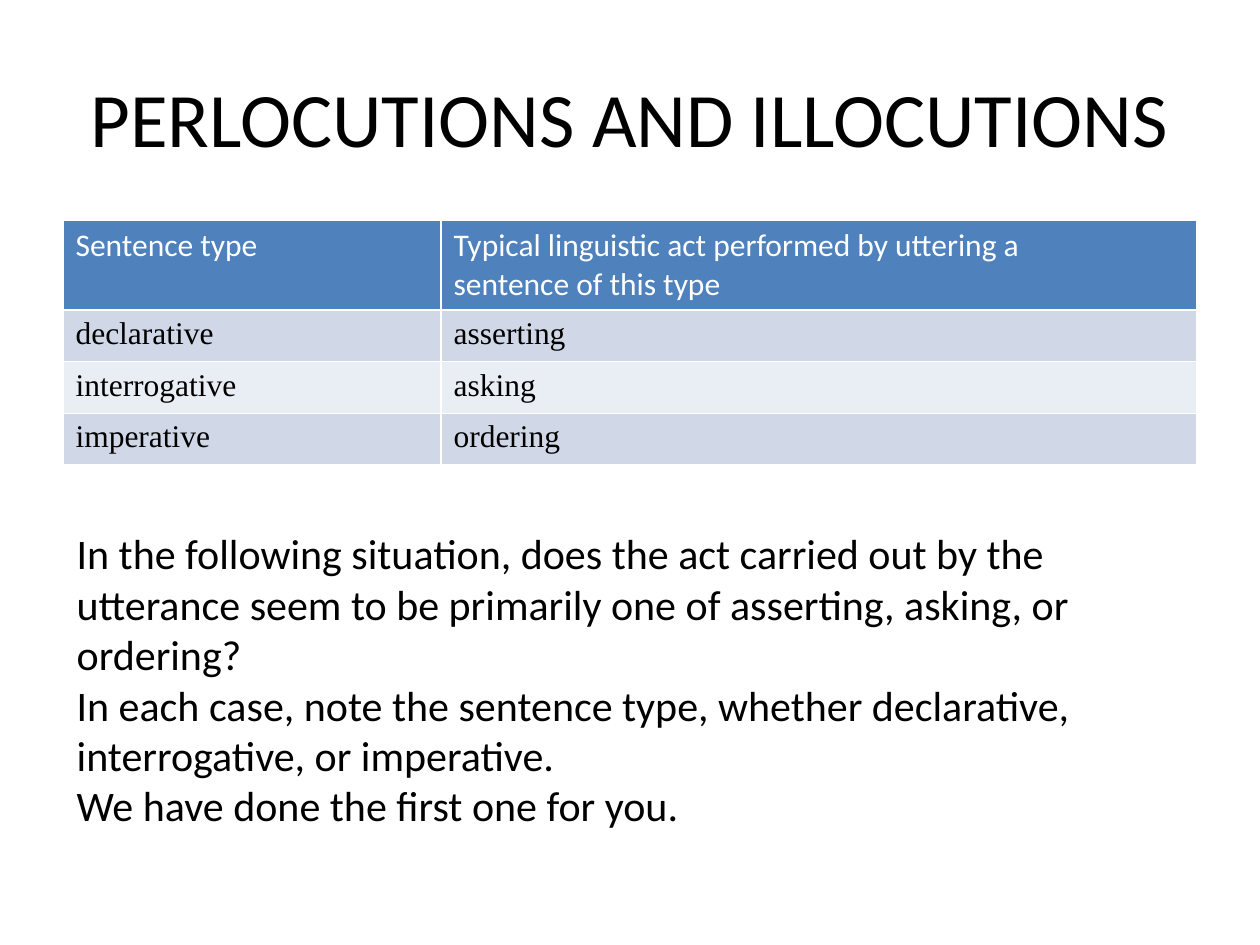
from dataclasses import dataclass

import pptx
import pptx.dml.color
import pptx.enum.text
import pptx.util

Inches = pptx.util.Inches

COLORS = {
    "text": "000000",
    "header_text": "FFFFFF",
    "header": "4F81BD",
    "band_dark": "D0D8E8",
    "band_light": "E9EDF4",
}
TITLE = "PERLOCUTIONS AND ILLOCUTIONS"
INSTRUCTIONS = [
    "In the following situation, does the act carried out by the utterance seem "
    "to be primarily one of asserting, asking, or ordering?",
    "In each case, note the sentence type, whether declarative, interrogative, "
    "or imperative.",
    "We have done the first one for you.",
]
COLUMN_WIDTHS = [3, 6]
ROW_HEIGHT = 0.41


@dataclass
class TableRow:
    sentence_type: str
    linguistic_act: str
    fill: str
    font_name: str = "Times New Roman"
    text_color: str = "text"


ROWS = [
    TableRow(
        "Sentence type",
        "Typical linguistic act performed by uttering a\nsentence of this type",
        "header",
        "Calibri",
        "header_text",
    ),
    TableRow("declarative", "asserting", "band_dark"),
    TableRow("interrogative", "asking", "band_light"),
    TableRow("imperative", "ordering", "band_dark"),
]


def color(name: str) -> pptx.dml.color.RGBColor:
    return pptx.dml.color.RGBColor.from_string(COLORS[name])


def write_text(frame, text: str, size: float, font_name: str = "Calibri",
               text_color: str = "text") -> None:
    frame.text = text
    for paragraph in frame.paragraphs:
        paragraph.font.size = pptx.util.Pt(size)
        paragraph.font.name = font_name
        paragraph.font.bold = False
        paragraph.font.color.rgb = color(text_color)


def add_title(slide) -> None:
    title = slide.shapes.title
    title.left, title.top = Inches(0.5), Inches(0.3)
    title.width, title.height = Inches(9), Inches(1.25)
    title.text_frame.vertical_anchor = pptx.enum.text.MSO_ANCHOR.MIDDLE
    write_text(title.text_frame, TITLE, 44)
    title.text_frame.paragraphs[0].alignment = pptx.enum.text.PP_ALIGN.CENTER


def add_sentence_table(slide, rows: list[TableRow]) -> None:
    table = slide.shapes.add_table(
        len(rows), len(COLUMN_WIDTHS), Inches(0.5), Inches(1.75),
        Inches(sum(COLUMN_WIDTHS)), Inches(ROW_HEIGHT * len(rows)),
    ).table
    for column, width in zip(table.columns, COLUMN_WIDTHS):
        column.width = Inches(width)
    for table_row, row in zip(table.rows, rows):
        table_row.height = Inches(ROW_HEIGHT)
        for cell, text in zip(table_row.cells, (row.sentence_type, row.linguistic_act)):
            cell.fill.solid()
            cell.fill.fore_color.rgb = color(row.fill)
            write_text(cell.text_frame, text, 18, row.font_name, row.text_color)


def add_instructions(slide) -> None:
    box = slide.shapes.add_textbox(Inches(0.51), Inches(4.14), Inches(8.98), Inches(2.52))
    box.text_frame.word_wrap = True
    box.text_frame.auto_size = pptx.enum.text.MSO_AUTO_SIZE.SHAPE_TO_FIT_TEXT
    write_text(box.text_frame, "\n".join(INSTRUCTIONS), 24)


def main() -> None:
    presentation = pptx.Presentation()
    presentation.slide_width = Inches(10)
    presentation.slide_height = Inches(7.5)
    slide = presentation.slides.add_slide(presentation.slide_layouts[5])
    add_title(slide)
    add_sentence_table(slide, ROWS)
    add_instructions(slide)
    presentation.save("out.pptx")


if __name__ == "__main__":
    main()
